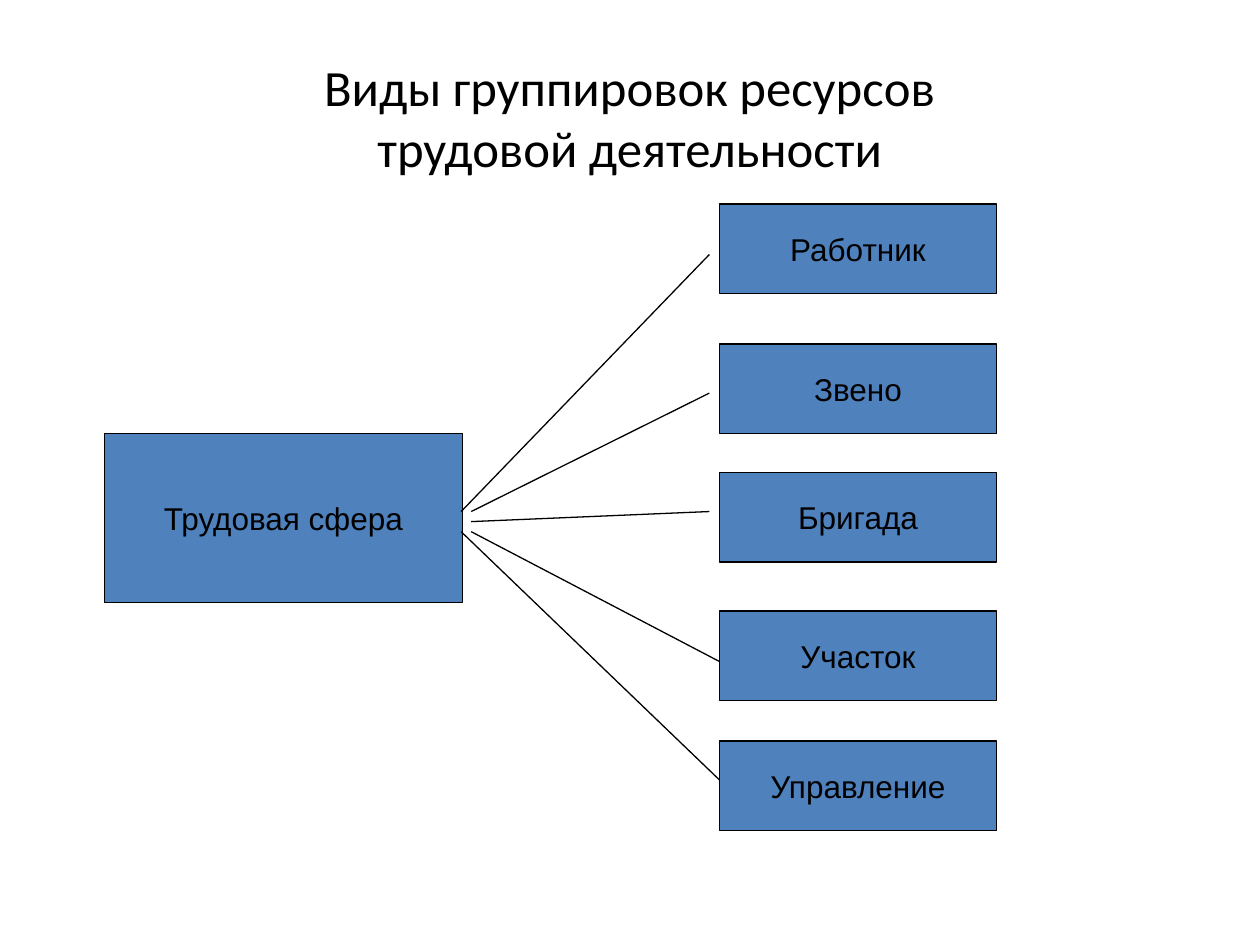
from pptx import Presentation
from pptx.dml.color import RGBColor
from pptx.enum import shapes, text
from pptx.oxml.ns import qn
from pptx.util import Inches, Pt

BLUE = RGBColor(0x4F, 0x81, 0xBD)
BLACK = RGBColor(0, 0, 0)


def format_text(tf, font, size):
    tf.vertical_anchor = text.MSO_ANCHOR.MIDDLE
    tf.auto_size = text.MSO_AUTO_SIZE.NONE
    for p in tf.paragraphs:
        p.alignment = text.PP_ALIGN.CENTER
        for r in p.runs:
            r.font.name = font
            r.font.size = Pt(size)
            r.font.color.rgb = BLACK


prs = Presentation()
prs.slide_width, prs.slide_height = Inches(10), Inches(7.5)
s = prs.slides.add_slide(prs.slide_layouts[5])

title = s.shapes.title
title.left, title.top = Inches(0.5), Inches(0.3)
title.width, title.height = Inches(9), Inches(1.25)
title.text_frame.text = "Виды группировок ресурсов\vтрудовой деятельности"
format_text(title.text_frame, "Calibri", 29)

boxes = [("Трудовая сфера", 0.83, 3.44, 2.84, 1.34)]
groups = [("Работник", 1.62), ("Звено", 2.73), ("Бригада", 3.75),
          ("Участок", 4.85), ("Управление", 5.88)]
boxes += [(name, 5.71, top, 2.2, 0.71) for name, top in groups]

for name, *box in boxes:
    sp = s.shapes.add_shape(shapes.MSO_SHAPE.RECTANGLE, *map(Inches, box))
    sp.shadow.inherit = False
    sp.fill.solid()
    sp.fill.fore_color.rgb = BLUE
    sp.line.color.rgb = BLACK
    sp.line.width = Pt(0.75)
    tf = sp.text_frame
    tf.text = name
    tf.word_wrap = False
    format_text(tf, "Arial", 18)

links = [
    (3.66, 4.06, 5.63, 2.02),
    (3.74, 4.06, 5.63, 3.12),
    (3.74, 4.14, 5.63, 4.06),
    (3.74, 4.22, 5.71, 5.25),
    (3.66, 4.22, 5.71, 6.19),
]
for ends in links:
    line = s.shapes.add_connector(shapes.MSO_CONNECTOR.STRAIGHT, *map(Inches, ends))
    line.line.color.rgb = BLACK
    line.line.width = Pt(0.75)
    spPr = line._element.spPr
    spPr.append(spPr.makeelement(qn("a:effectLst"), {}))

prs.save("out.pptx")
